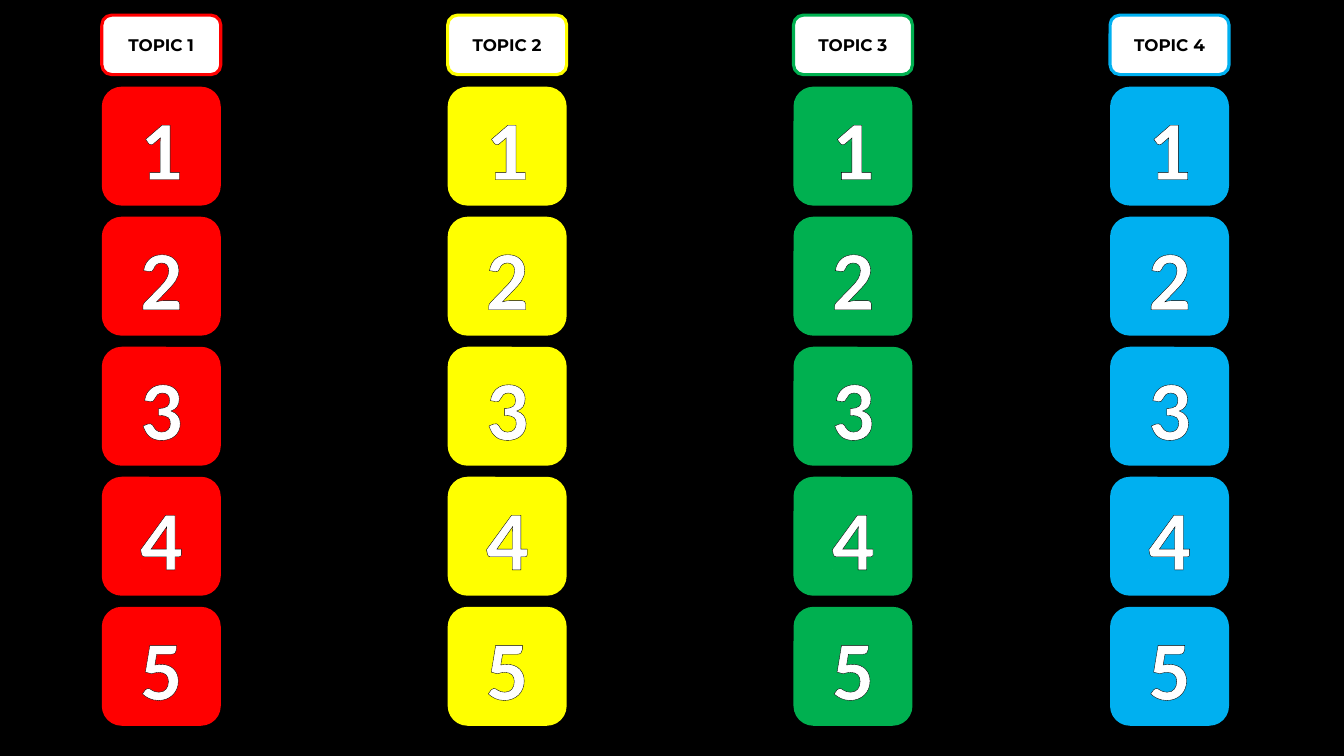
from dataclasses import dataclass

from lxml import etree
from pptx import Presentation
from pptx import util as u
from pptx.dml.color import RGBColor
from pptx.enum import shapes, text
from pptx.oxml import ns
from pptx.shapes.autoshape import Shape
from pptx.slide import Slide
from pptx.text.text import Font


@dataclass(frozen=True)
class Theme:
    background: str = "000000"
    header_fill: str = "FFFFFF"
    header_text: str = "000000"
    number_text: str = "FFFFFF"
    number_outline: str = "000000"
    header_font: str = "Montserrat"
    number_font: str = "Calibri"
    header_size: int = 12
    number_size: int = 60
    border: float = 2.25


@dataclass(frozen=True)
class Grid:
    """Board measures in inches; rows share one pitch."""
    tile: float = 1.18
    header_top: float = 0.15
    header_height: float = 0.59
    first_row: float = 0.86
    row_pitch: float = 1.29
    rows: int = 5

    def row_top(self, row: int) -> float:
        return self.first_row + row * self.row_pitch


@dataclass(frozen=True)
class Topic:
    name: str
    color: str
    left: float


THEME = Theme()
GRID = Grid()
TOPICS = (
    Topic("TOPIC 1", "FF0000", 1.01),
    Topic("TOPIC 2", "FFFF00", 4.44),
    Topic("TOPIC 3", "00B050", 7.87),
    Topic("TOPIC 4", "00B0F0", 11.01),
)


def rgb(color: str) -> RGBColor:
    return RGBColor.from_string(color)


def add_card(slide: Slide, left: float, top: float, height: float, fill: str,
             label: str) -> Shape:
    card = slide.shapes.add_shape(
        shapes.MSO_SHAPE.ROUNDED_RECTANGLE,
        u.Inches(left), u.Inches(top), u.Inches(GRID.tile), u.Inches(height))
    card.shadow.inherit = False
    card.fill.solid()
    card.fill.fore_color.rgb = rgb(fill)
    card.line.fill.background()
    frame = card.text_frame
    frame.text = label
    frame.vertical_anchor = text.MSO_ANCHOR.MIDDLE
    frame.paragraphs[0].alignment = text.PP_ALIGN.CENTER
    return card


def style_label(card: Shape, face: str, size: int, color: str) -> Font:
    font = card.text_frame.paragraphs[0].runs[0].font
    font.name = face
    font.size = u.Pt(size)
    font.bold = True
    font.color.rgb = rgb(color)
    return font


def outline_label(card: Shape) -> None:
    """Draw a thin contour around the letters of the card."""
    properties = card.text_frame.paragraphs[0].runs[0]._r.get_or_add_rPr()
    line = etree.Element(ns.qn("a:ln"), w=str(u.Pt(THEME.border)))
    fill = etree.SubElement(line, ns.qn("a:solidFill"))
    etree.SubElement(fill, ns.qn("a:srgbClr"), val=THEME.number_outline)
    properties.insert(0, line)


def add_number(slide: Slide, topic: Topic, row: int) -> None:
    card = add_card(slide, topic.left, GRID.row_top(row), GRID.tile,
                    topic.color, str(row + 1))
    style_label(card, THEME.number_font, THEME.number_size, THEME.number_text)
    outline_label(card)


def add_header(slide: Slide, topic: Topic) -> None:
    card = add_card(slide, topic.left, GRID.header_top, GRID.header_height,
                    THEME.header_fill, topic.name)
    card.line.color.rgb = rgb(topic.color)
    card.line.width = u.Pt(THEME.border)
    style_label(card, THEME.header_font, THEME.header_size, THEME.header_text)


def main() -> None:
    deck = Presentation()
    deck.slide_width, deck.slide_height = u.Inches(13.33), u.Inches(7.5)
    board = deck.slides.add_slide(deck.slide_layouts.get_by_name("Blank"))
    board.background.fill.solid()
    board.background.fill.fore_color.rgb = rgb(THEME.background)
    for topic in TOPICS:
        for row in reversed(range(GRID.rows)):
            add_number(board, topic, row)
    for topic in TOPICS:
        add_header(board, topic)
    deck.save("out.pptx")


if __name__ == "__main__":
    main()
